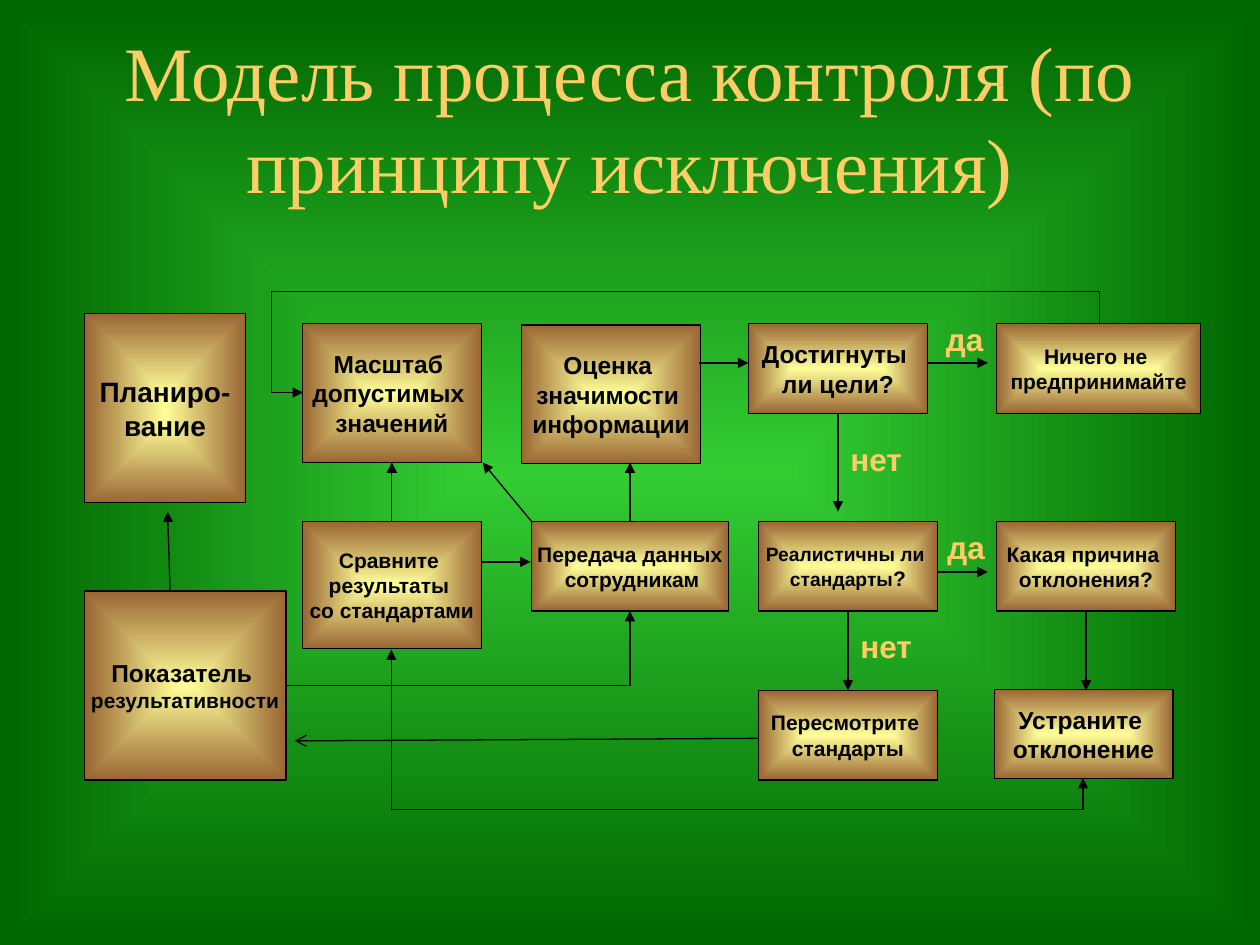
from lxml.etree import SubElement
from pptx import Presentation
from pptx.dml.color import RGBColor
from pptx.enum.shapes import MSO_CONNECTOR, MSO_SHAPE
from pptx.enum.text import MSO_ANCHOR, MSO_AUTO_SIZE, PP_ALIGN
from pptx.oxml.ns import qn
from pptx.util import Pt

PX = 9144  # EMU in one px, 100 px to the inch
TOP, LEFT, BOTTOM, RIGHT = range(4)
GOLD, BLACK = "FFCC66", "000000"


def color(value):
    return RGBColor.from_string(value)


def fill_from_center(fill, element, center, edge):
    fill.gradient()
    for stop, value in zip(fill.gradient_stops, (center, edge)):
        stop.color.rgb = color(value)
    gradient = next(element.iter(qn("a:gradFill")))
    gradient.remove(gradient.find(qn("a:lin")))
    shade = SubElement(gradient, qn("a:path"), path="shape")
    SubElement(shade, qn("a:fillToRect"), l="50000", t="50000", r="50000", b="50000")


presentation = Presentation()
presentation.slide_width, presentation.slide_height = 1000 * PX, 750 * PX
slide = presentation.slides.add_slide(presentation.slide_layouts[5])
fill_from_center(slide.background.fill, slide._element, "33CC33", "006600")

# Title
title = slide.shapes.title
title.left, title.top, title.width, title.height = (n * PX for n in (50, 30, 900, 125))
title.text_frame.text = "Модель процесса контроля (по принципу исключения)"
title.text_frame.auto_size = MSO_AUTO_SIZE.NONE
title.text_frame.vertical_anchor = MSO_ANCHOR.MIDDLE
title_paragraph = title.text_frame.paragraphs[0]
title_paragraph.alignment = PP_ALIGN.CENTER
for name, value in {"name": "Times New Roman", "size": Pt(44)}.items():
    setattr(title_paragraph.runs[0].font, name, value)
title_paragraph.runs[0].font.color.rgb = color(GOLD)

# Boxes: name, preset, (left, top, width, height), lines made of (text, size) runs
PROCESS, RECTANGLE = MSO_SHAPE.FLOWCHART_PROCESS, MSO_SHAPE.RECTANGLE
BOXES = [
    ("planning", PROCESS, (67, 249, 128, 150), [[("Планиро-", 16)], [("вание", 16)]]),
    ("indicator", PROCESS, (67, 469, 160, 150),
     [[("Показатель ", 14)], [("результативности", 12)]]),
    ("scale", RECTANGLE, (240, 257, 142, 110),
     [[("Масштаб ", 14)], [("допустимых ", 14)], [("значений", 14)]]),
    ("transfer", RECTANGLE, (422, 414, 156, 71),
     [[("Передача данных", 12)], [(" ", 9), ("сотрудникам", 12)]]),
    ("assessment", RECTANGLE, (414, 258, 142, 110),
     [[("Оценка ", 14)], [("значимости ", 14)], [("информации", 14)]]),
    ("compare", RECTANGLE, (240, 414, 142, 101),
     [[("Сравните ", 12)], [("результаты ", 12)], [("со стандартами", 12)]]),
    ("revise", RECTANGLE, (602, 548, 142, 71), [[("Пересмотрите ", 12)], [("стандарты", 12)]]),
    ("realistic", RECTANGLE, (602, 414, 142, 71),
     [[("Реалистичны ли ", 11)], [("стандарты", 11), ("?", 12)]]),
    ("goals", RECTANGLE, (594, 257, 142, 71), [[("Достигнуты ", 14)], [("ли цели?", 14)]]),
    ("remove", RECTANGLE, (789, 547, 142, 71), [[("Устраните ", 14)], [("отклонение", 14)]]),
    ("cause", RECTANGLE, (791, 414, 142, 71), [[("Какая причина ", 12)], [("отклонения?", 12)]]),
    ("nothing", RECTANGLE, (791, 257, 162, 71), [[("Ничего не ", 12)], [("предпринимайте", 12)]]),
]
boxes = {}
for key, preset, place, lines in BOXES:
    shape = boxes[key] = slide.shapes.add_shape(preset, *(n * PX for n in place))
    shape.shadow.inherit = False
    fill_from_center(shape.fill, shape._element, "FFFF99", "996633")
    shape.line.color.rgb = color(BLACK)
    shape.line.width = Pt(0.75)
    frame = shape.text_frame
    frame.word_wrap = False
    frame.vertical_anchor = MSO_ANCHOR.MIDDLE
    for index, line in enumerate(lines):
        paragraph = frame.add_paragraph() if index else frame.paragraphs[0]
        paragraph.alignment = PP_ALIGN.CENTER
        for text, size in line:
            run = paragraph.add_run()
            run.text = text
            for name, value in {"name": "Arial", "size": Pt(size), "bold": True}.items():
                setattr(run.font, name, value)
            run.font.color.rgb = color(BLACK)

# Arrows: ends, (head, tail), joined box sides at the beginning and the end
FORWARD, BACKWARD, BOTH = (None, "triangle"), ("triangle", None), ("triangle", "triangle")
ARROWS = [
    ((382, 446, 421, 446), FORWARD, None, None),
    ((555, 288, 594, 288), FORWARD, None, None),
    ((665, 328, 665, 406), FORWARD, ("goals", BOTTOM), None),
    ((673, 485, 673, 548), FORWARD, ("realistic", BOTTOM), ("revise", TOP)),
    ((736, 288, 784, 288), FORWARD, None, None),
    ((744, 454, 784, 454), FORWARD, None, None),
    ((862, 485, 862, 548), FORWARD, ("cause", BOTTOM), None),
    ((602, 586, 234, 588), (None, "arrow"), None, None),
    ((133, 406, 135, 469), BACKWARD, None, None),
    ((311, 367, 311, 414), BACKWARD, ("scale", BOTTOM), ("compare", TOP)),
    ((422, 414, 383, 367), FORWARD, None, None),
    ((500, 414, 500, 367), FORWARD, ("transfer", TOP), None),
    ((227, 544, 500, 485), FORWARD, ("indicator", RIGHT), ("transfer", BOTTOM)),
    ((311, 516, 860, 618), BOTH, ("compare", BOTTOM), ("remove", BOTTOM)),
    ((872, 257, 240, 312), FORWARD, ("nothing", TOP), ("scale", LEFT)),
]
# Bent arrows, by joined boxes: preset, frame before turning, xfrm settings, adjustments
BENDS = {
    ("indicator", "transfer"): ("bentConnector2", (227, 485, 273, 59), {"flipV": "1"}, []),
    ("compare", "remove"): ("bentConnector3", (534, 292, 102, 549),
                            {"rot": "16200000", "flipH": "1"}, [124400]),
    ("nothing", "scale"): ("bentConnector4", (529, -32, 55, 632),
                           {"rot": "16200000", "flipH": "1", "flipV": "1"}, [-45400, 104000]),
}
for ends, heads, begin, end in ARROWS:
    bend = BENDS.get((begin[0], end[0])) if begin and end else None
    kind = MSO_CONNECTOR.ELBOW if bend else MSO_CONNECTOR.STRAIGHT
    connector = slide.shapes.add_connector(kind, *(n * PX for n in ends))
    if begin:
        connector.begin_connect(boxes[begin[0]], begin[1])
    if end:
        connector.end_connect(boxes[end[0]], end[1])
    properties = connector._element.spPr
    if bend:
        preset, place, turns, adjustments = bend
        for name, value in zip(("left", "top", "width", "height"), place):
            setattr(connector, name, value * PX)
        transform = properties.find(qn("a:xfrm"))
        for name in ("flipH", "flipV"):
            transform.attrib.pop(name, None)
        transform.attrib.update(turns)
        geometry = properties.find(qn("a:prstGeom"))
        geometry.set("prst", preset)
        guides = geometry.find(qn("a:avLst"))
        for number, value in enumerate(adjustments, 1):
            SubElement(guides, qn("a:gd"), name=f"adj{number}", fmla=f"val {value}")
    connector.line.color.rgb = color(BLACK)
    connector.line.width = Pt(0.75)
    for tag, head in zip(("a:headEnd", "a:tailEnd"), heads):
        if head:
            SubElement(properties.find(qn("a:ln")), qn(tag), type=head)
    SubElement(properties, qn("a:effectLst"))

# Answers beside the arrows
ANSWERS = [(" да", 734, 249, 57), ("да", 742, 414, 50), ("нет", 665, 344, 61), ("нет", 673, 493, 61)]
for text, left, top, width in ANSWERS:
    answer = slide.shapes.add_textbox(left * PX, top * PX, width * PX, 40 * PX)
    frame = answer.text_frame
    frame.word_wrap = False
    frame.auto_size = MSO_AUTO_SIZE.SHAPE_TO_FIT_TEXT
    run = frame.paragraphs[0].add_run()
    run.text = text
    for name, value in {"name": "Arial", "size": Pt(18), "bold": True}.items():
        setattr(run.font, name, value)
    run.font.color.rgb = color(GOLD)

presentation.save("out.pptx")
